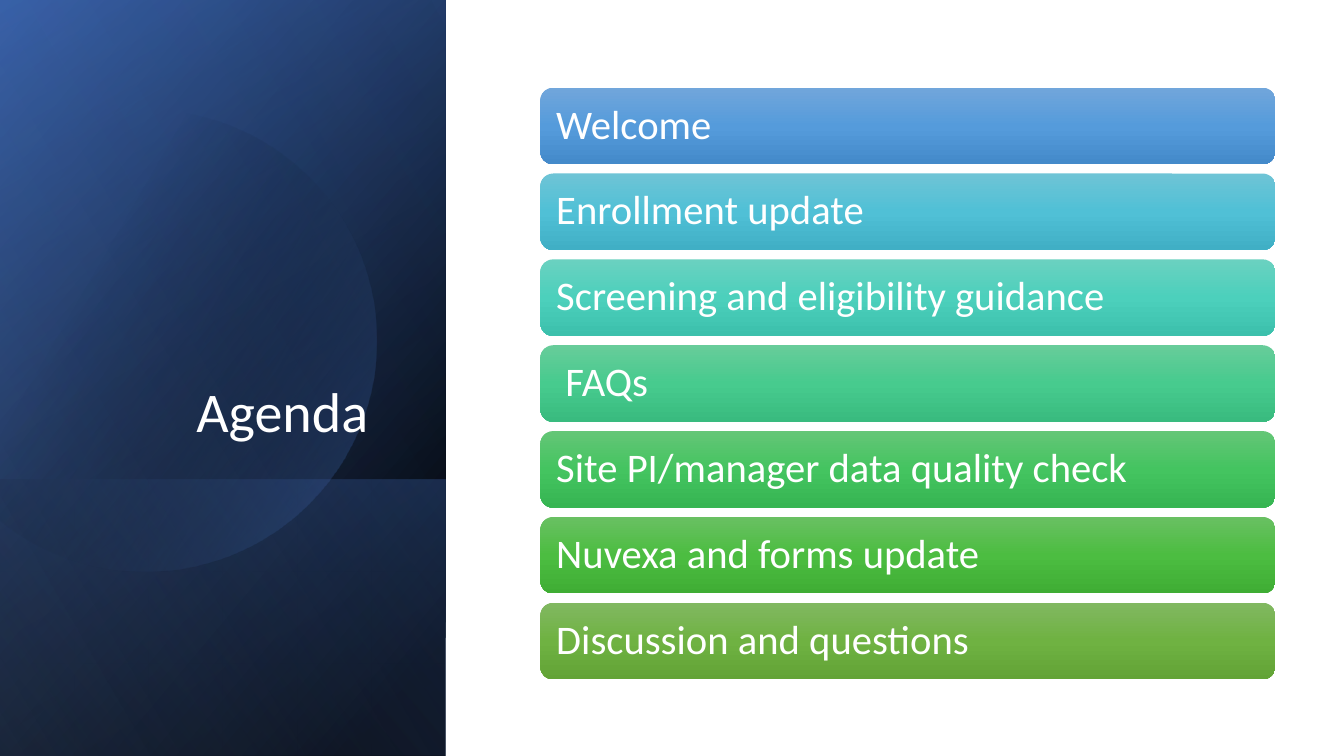
from math import acos, cos, sin

from lxml.etree import SubElement
from pptx import Presentation
from pptx.dml.color import RGBColor
from pptx.enum.shapes import MSO_SHAPE
from pptx.enum.text import MSO_ANCHOR, PP_ALIGN
from pptx.oxml.ns import qn
from pptx.util import Inches, Pt

PANEL_WIDTH = 4.42
SLIDE_HEIGHT = 7.5
AGENDA = [
    ("Welcome", ("71A6DB", "559BDB", "448ACA")),
    ("Enrollment update", ("6EC4D6", "50C0D6", "40AFC5")),
    ("Screening and eligibility guidance", ("6AD1C0", "4CD0BC", "3CC0AC")),
    (" FAQs", ("67CC9A", "47CB8E", "39BB7F")),
    ("Site PI/manager data quality check", ("64C677", "44C460", "36B552")),
    ("Nuvexa and forms update", ("69C062", "4CBD41", "3FAD34")),
    ("Discussion and questions", ("81B861", "6FB242", "62A336")),
]


def color(value):
    return RGBColor.from_string(value)


def paint_gradient(shape, stops, angle):
    """Fill with (position %, colour, opacity %) stops; remove line and shadow."""
    shape.shadow.inherit = False
    shape.line.fill.background()
    shape.fill.background()
    properties = shape._element.spPr
    gradient = SubElement(properties, qn("a:gradFill"), rotWithShape="1")
    properties.replace(properties.find(qn("a:noFill")), gradient)
    stop_list = SubElement(gradient, qn("a:gsLst"))
    for position, value, opacity in stops:
        stop = SubElement(stop_list, qn("a:gs"), pos=str(position * 1000))
        tint = SubElement(stop, qn("a:srgbClr"), val=value)
        if opacity < 100:
            SubElement(tint, qn("a:alpha"), val=str(opacity * 1000))
    SubElement(gradient, qn("a:lin"), ang=str(round(angle * 60000)), scaled="0")


def style_text(frame, size, align):
    frame.word_wrap = True
    para = frame.paragraphs[0]
    para.alignment = align
    para.line_spacing = 0.9
    font = para.runs[0].font
    font.name = "Calibri"
    font.size = Pt(size)
    font.color.rgb = color("FFFFFF")


def add_turned_panel(page, left, top, width, height, stops, angle):
    """Cover the given box with a mirrored rectangle turned by 90 degrees."""
    shift = (height - width) / 2
    panel = page.shapes.add_shape(
        MSO_SHAPE.RECTANGLE, Inches(left - shift), Inches(top + shift),
        Inches(height), Inches(width))
    panel.rotation = 90
    panel._element.spPr.find(qn("a:xfrm")).set("flipH", "1")
    paint_gradient(panel, stops, angle)


def add_clipped_circle(page, left, center_x, center_y, radius):
    """Draw the part of a circle that lies to the right of left."""
    reach = acos((left - center_x) / radius)
    steps = 120
    angles = [-reach + 2 * reach * step / steps for step in range(steps + 1)]
    points = [(1000 * (center_x + radius * cos(angle)),
               1000 * (center_y + radius * sin(angle))) for angle in angles]
    builder = page.shapes.build_freeform(*points[0], scale=Inches(1) / 1000)
    builder.add_line_segments(points[1:], close=True)
    paint_gradient(builder.convert_to_shape(),
                   [(29, "000000", 0), (100, "4472C4", 43)], 30)


def add_title_panel(page, left, top, width, height):
    base_height = 2.74
    whole = (left, top, width, height)
    base = (left, top + height - base_height, width, base_height)
    add_turned_panel(page, *whole, [(8, "000000", 100), (100, "2F5597", 100)], 50)
    add_turned_panel(page, *whole, [(0, "000000", 0), (99, "4472C4", 46)], 30)
    add_turned_panel(page, *base, [(2, "4472C4", 29), (100, "000000", 30)], 130)
    add_clipped_circle(page, left, left + 1.44, top + 3.38, 2.29)
    add_turned_panel(page, *whole, [(0, "000000", 0), (99, "8FAADC", 11)], 120)

    box = page.shapes.add_textbox(
        Inches(left + 0.64), Inches(top + 1.84), Inches(3.41), Inches(2.62))
    frame = box.text_frame
    frame.text = "Agenda"
    frame.vertical_anchor = MSO_ANCHOR.BOTTOM
    frame.margin_right = Inches(0.4)
    style_text(frame, 40, PP_ALIGN.RIGHT)


def add_agenda(page, left, top, width, height):
    bar_height = 0.76
    pitch = (height - bar_height) / (len(AGENDA) - 1)
    for index, (topic, shades) in enumerate(AGENDA):
        bar = page.shapes.add_shape(
            MSO_SHAPE.ROUNDED_RECTANGLE, Inches(left), Inches(top + index * pitch),
            Inches(width), Inches(bar_height))
        paint_gradient(bar, [(50 * place, shade, 100)
                             for place, shade in enumerate(shades)], 90)
        frame = bar.text_frame
        frame.text = topic
        frame.vertical_anchor = MSO_ANCHOR.MIDDLE
        frame.margin_left = frame.margin_right = Inches(0.12)
        style_text(frame, 29, PP_ALIGN.LEFT)


def main():
    deck = Presentation()
    deck.slide_width = Inches(13.33)
    deck.slide_height = Inches(SLIDE_HEIGHT)
    page = deck.slides.add_slide(deck.slide_layouts[6])
    add_title_panel(page, 0, 0, PANEL_WIDTH, SLIDE_HEIGHT)
    add_agenda(page, 5.36, 0.87, 7.29, 5.87)
    deck.save("out.pptx")


if __name__ == "__main__":
    main()
